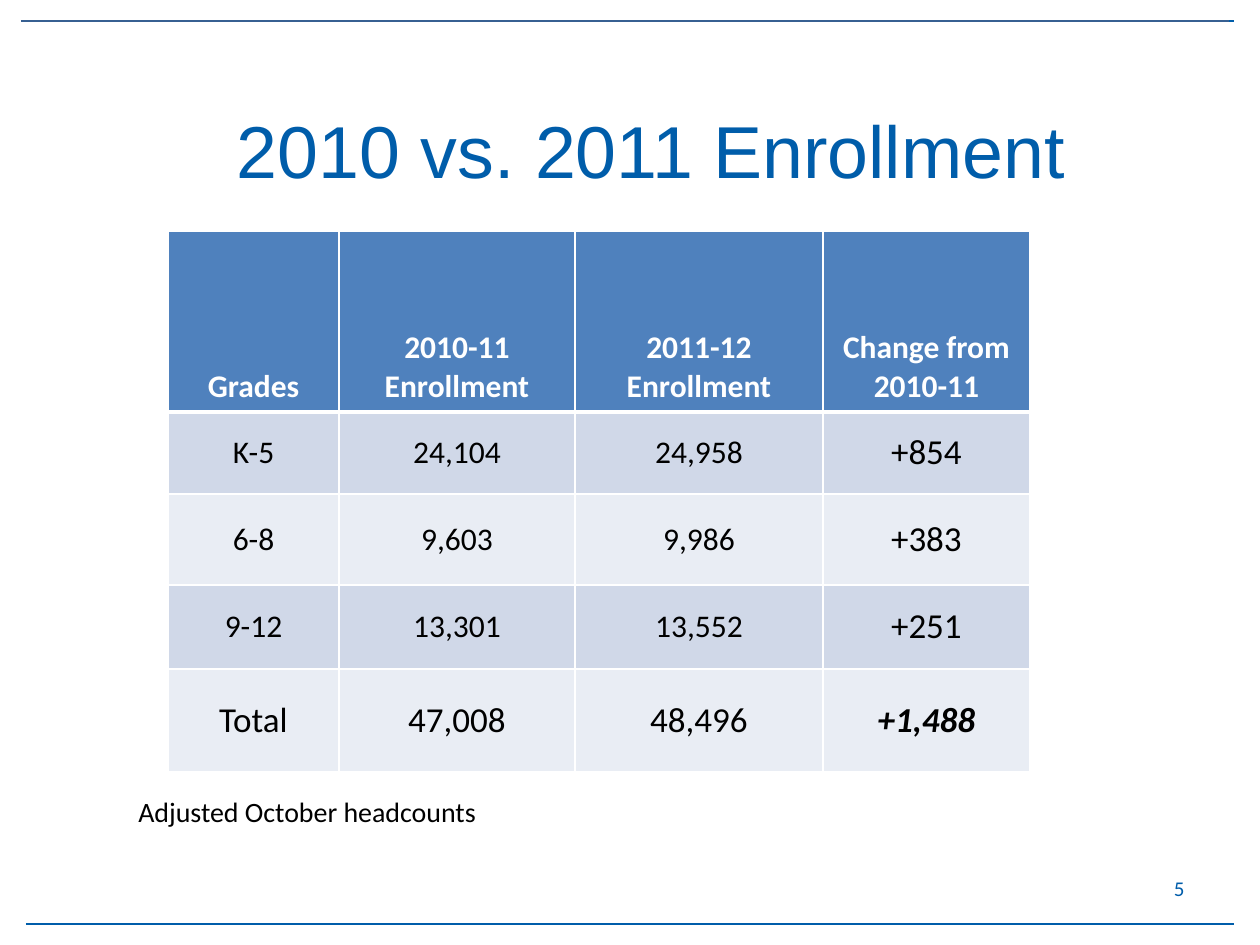
from dataclasses import dataclass

from lxml import etree
from pptx import Presentation
from pptx.dml.color import RGBColor
from pptx.enum.shapes import MSO_CONNECTOR
from pptx.enum.text import MSO_ANCHOR, PP_ALIGN
from pptx.oxml.ns import qn
from pptx.util import Emu, Pt

TOP, MIDDLE, BOTTOM = MSO_ANCHOR.TOP, MSO_ANCHOR.MIDDLE, MSO_ANCHOR.BOTTOM
LEFT, CENTER, RIGHT = PP_ALIGN.LEFT, PP_ALIGN.CENTER, PP_ALIGN.RIGHT
STRAIGHT = MSO_CONNECTOR.STRAIGHT
PIXELS_PER_INCH = 126


@dataclass(frozen=True)
class Theme:
    blue: str = "005DAA"
    dark_blue: str = "376092"
    header: str = "4F81BD"
    bands: tuple = ("D0D8E8", "E9EDF4")
    white: str = "FFFFFF"
    black: str = "000000"
    title_font: str = "Arial"
    body_font: str = "Calibri"
    title_size: int = 42
    large_size: int = 20
    body_size: int = 18
    note_size: int = 16
    number_size: int = 12


THEME = Theme()
HEADERS = ["Grades", "2010-11 Enrollment", "2011-12 Enrollment", "Change from\n2010-11"]
ENROLLMENT = [
    ["K-5", "24,104", "24,958", "+854"],
    ["6-8", "9,603", "9,986", "+383"],
    ["9-12", "13,301", "13,552", "+251"],
    ["Total", "47,008", "48,496", "+1,488"],
]
COLUMN_WIDTHS = [171, 236, 248, 207]
ROW_HEIGHTS = [181, 82, 91, 84, 103]


def px(length):
    return Emu(round(length * 914400 / PIXELS_PER_INCH))


def write_text(frame, text, *, size=THEME.body_size, font=THEME.body_font,
               color=THEME.black, align=LEFT, bold=False, italic=False):
    """Write one paragraph per line of text."""
    frame.word_wrap = True
    for index, line in enumerate(text.split("\n")):
        paragraph = frame.add_paragraph() if index else frame.paragraphs[0]
        paragraph.alignment = align
        run = paragraph.add_run()
        run.text = line
        run.font.name = font
        run.font.size = Pt(size)
        run.font.bold = bold
        run.font.italic = italic
        run.font.color.rgb = RGBColor.from_string(color)


def add_text(slide, box, text, anchor=TOP, **text_format):
    frame = slide.shapes.add_textbox(*map(px, box)).text_frame
    frame.vertical_anchor = anchor
    write_text(frame, text, **text_format)


def add_rule(slide, left, top, width, color):
    line = slide.shapes.add_connector(
        STRAIGHT, px(left), px(top), px(left + width), px(top))
    line.line.color.rgb = RGBColor.from_string(color)
    line.line.width = Pt(1.5)
    etree.SubElement(line._element.spPr, qn("a:effectLst"))


def set_borders(cell, **widths):
    """Draw white borders; they must come before the fill in the cell."""
    properties = cell._tc.get_or_add_tcPr()
    for side, width in widths.items():
        border = etree.SubElement(properties, qn(f"a:ln{side}"), w=str(Pt(width)))
        fill = etree.SubElement(border, qn("a:solidFill"))
        etree.SubElement(fill, qn("a:srgbClr"), val=THEME.white)


def add_frame_rules(slide, left, top, width, height):
    add_rule(slide, left, top, width, THEME.blue)
    add_rule(slide, left, top + height, width, THEME.blue)
    add_rule(slide, left - 5, top, width, THEME.dark_blue)


def add_enrollment_table(slide, left, top):
    rows = [HEADERS, *ENROLLMENT]
    table = slide.shapes.add_table(
        len(rows), len(HEADERS), px(left), px(top),
        px(sum(COLUMN_WIDTHS)), px(sum(ROW_HEIGHTS))).table
    for column, width in zip(table.columns, COLUMN_WIDTHS):
        column.width = px(width)
    for row, height in zip(table.rows, ROW_HEIGHTS):
        row.height = px(height)

    last_row, last_column = len(rows) - 1, len(HEADERS) - 1
    for row_index, values in enumerate(rows):
        is_header = row_index == 0
        fill = THEME.header if is_header else THEME.bands[(row_index - 1) % 2]
        for column_index, value in enumerate(values):
            cell = table.cell(row_index, column_index)
            is_total = row_index == last_row
            is_change = column_index == last_column
            is_large = not is_header and (is_total or is_change)
            set_borders(cell, L=1, R=1, T=3 if row_index == 1 else 1,
                        B=3 if is_header else 1)
            cell.fill.solid()
            cell.fill.fore_color.rgb = RGBColor.from_string(fill)
            cell.vertical_anchor = BOTTOM if is_header else MIDDLE
            write_text(cell.text_frame, value, align=CENTER,
                       size=THEME.large_size if is_large else THEME.body_size,
                       color=THEME.white if is_header else THEME.black,
                       bold=is_header or (is_total and is_change),
                       italic=is_total and is_change)


def build_enrollment_slide(presentation):
    slide = presentation.slides.add_slide(presentation.slide_layouts[6])
    # Rules along the top and bottom edges
    add_frame_rules(slide, 26, 21, 1208, 903)
    # Title
    add_text(slide, (84, 71, 1134, 157), "2010 vs. 2011 Enrollment", MIDDLE,
             size=THEME.title_size, font=THEME.title_font,
             color=THEME.blue, align=CENTER)
    # Table and its note
    add_enrollment_table(slide, 168, 231)
    add_text(slide, (126, 788, 970, 47), "Adjusted October headcounts",
             size=THEME.note_size)
    # Page number
    add_text(slide, (903, 863, 294, 50), "5", MIDDLE,
             size=THEME.number_size, color=THEME.blue, align=RIGHT)


def main():
    presentation = Presentation()
    presentation.slide_width = px(1260)
    presentation.slide_height = px(945)
    build_enrollment_slide(presentation)
    presentation.save("out.pptx")


if __name__ == "__main__":
    main()
